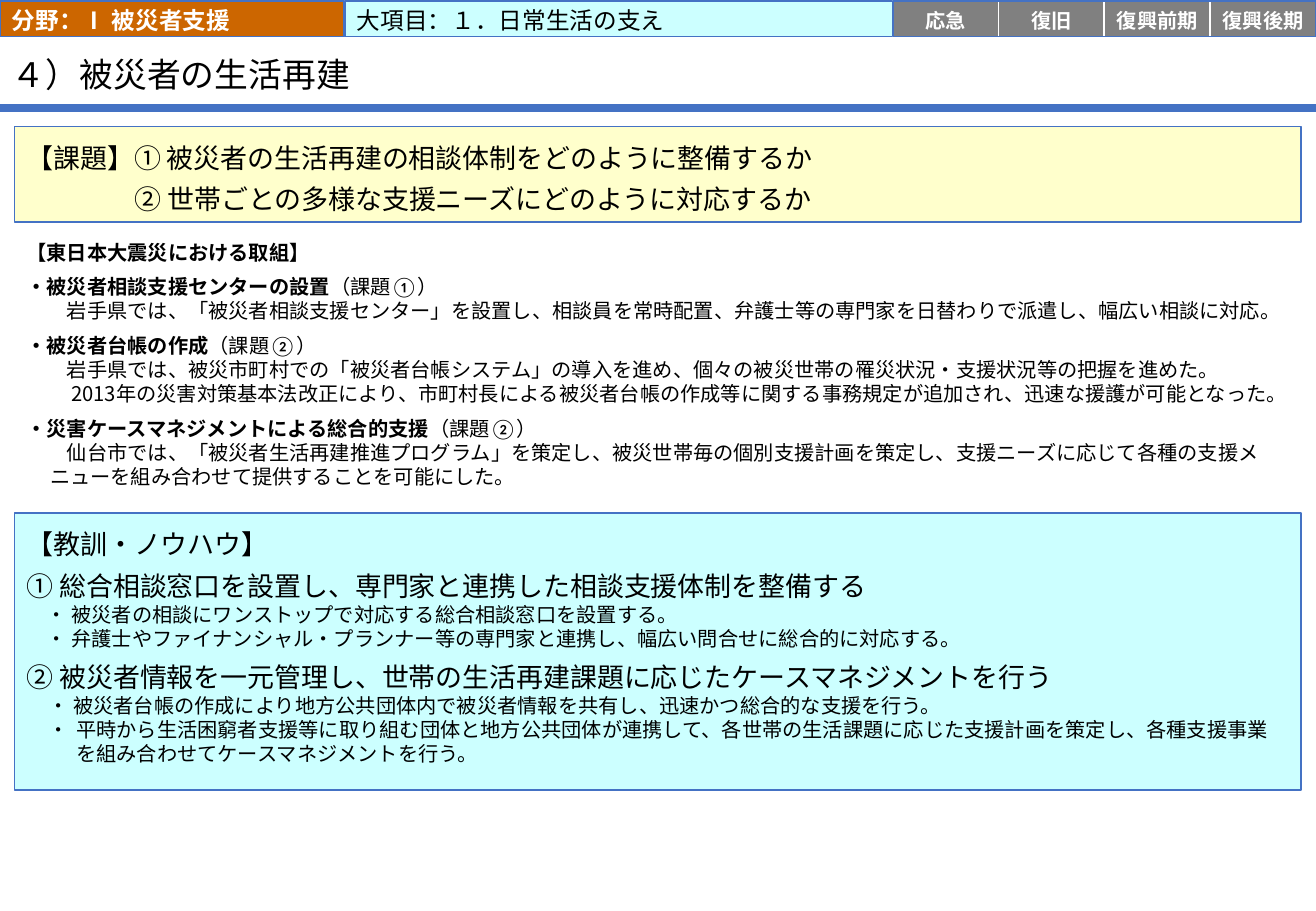
"""Build the slide on rebuilding the lives of disaster victims."""
from dataclasses import dataclass

from lxml import etree
from pptx import Presentation
from pptx.dml.color import RGBColor
from pptx.enum.shapes import MSO_CONNECTOR, MSO_SHAPE
from pptx.enum.text import MSO_ANCHOR, PP_ALIGN
from pptx.oxml.ns import qn
from pptx.slide import Slide
from pptx.util import Pt

RECTANGLE = MSO_SHAPE.RECTANGLE
STRAIGHT = MSO_CONNECTOR.STRAIGHT
TOP, MIDDLE = MSO_ANCHOR.TOP, MSO_ANCHOR.MIDDLE
LEFT, CENTER = PP_ALIGN.LEFT, PP_ALIGN.CENTER

BLACK = RGBColor(0x00, 0x00, 0x00)
WHITE = RGBColor(0xFF, 0xFF, 0xFF)
BLUE = RGBColor(0x44, 0x72, 0xC4)
ORANGE = RGBColor(0xCC, 0x66, 0x00)
CYAN = RGBColor(0xCC, 0xFF, 0xFF)
YELLOW = RGBColor(0xFF, 0xFF, 0xCC)
GRAY = RGBColor(0x80, 0x80, 0x80)

CALIBRI, NOTO = "Calibri", "Noto Sans CJK JP"
PAGE_WIDTH, PAGE_HEIGHT = 780, 540
BAR_TOP, BAR_HEIGHT = 0.7, 20.9
BODY_LEFT, BODY_WIDTH = 8.6, 762.5
PHASE_LEFT, PHASE_WIDTH = 529.2, 62.7
PHASES = ("応急", "復旧", "復興前期", "復興後期")


@dataclass(frozen=True)
class Span:
    text: str
    size: float = 12
    font: str = NOTO
    bold: bool = False
    color: RGBColor = BLACK


@dataclass(frozen=True)
class Para:
    spans: tuple[Span, ...]
    margin: float = 0
    indent: float = 0
    before: float = 0
    spacing: float | Pt | None = None
    align: PP_ALIGN = LEFT


@dataclass(frozen=True)
class Box:
    left: float
    top: float
    width: float
    height: float
    paras: tuple[Para, ...] = ()
    fill: RGBColor | None = None
    line: RGBColor | None = None
    insets: tuple[float, float, float, float] = (7.2, 3.6, 7.2, 3.6)
    anchor: MSO_ANCHOR = MIDDLE


def plain(text: str, size: float = 12, **layout: float | Pt) -> Para:
    """Return a paragraph of one regular span."""
    return Para((Span(text, size),), **layout)


def heading(title: str, issue: str = "", before: float = 6) -> Para:
    """Return a bold heading followed by the issue it answers."""
    spans = [Span(title, font=CALIBRI, bold=True)]
    if issue:
        spans.append(Span(issue, font=CALIBRI))
    return Para(tuple(spans), before=before)


def bar(left: float, width: float, text: str, fill: RGBColor, color: RGBColor, bold: bool) -> Box:
    """Return a labelled cell of the top bar."""
    label = Para((Span(text, 14, CALIBRI, bold, color),))
    return Box(left, BAR_TOP, width, BAR_HEIGHT, (label,), fill, BLUE, (7.2, 1.4, 7.2, 0))


def phase(index: int, text: str) -> Box:
    """Return one recovery phase cell of the top bar."""
    label = Para((Span(text, 12, CALIBRI, True, WHITE),), align=CENTER)
    return Box(PHASE_LEFT + index * PHASE_WIDTH, BAR_TOP, PHASE_WIDTH, BAR_HEIGHT,
               (label,), GRAY, WHITE, (0, 1.4, 0, 0))


def write_paragraph(paragraph, para: Para) -> None:
    """Write the spans and the layout of one paragraph."""
    formats = {"alignment": para.align, "space_before": Pt(para.before),
               "space_after": Pt(0), "line_spacing": para.spacing}
    for name, value in formats.items():
        setattr(paragraph, name, value)
    properties = paragraph._p.get_or_add_pPr()
    properties.set("marL", str(Pt(para.margin)))
    properties.set("indent", str(Pt(para.indent)))
    for span in para.spans:
        run = paragraph.add_run()
        run.text = span.text
        formats = {"name": span.font, "size": Pt(span.size), "bold": span.bold}
        for name, value in formats.items():
            setattr(run.font, name, value)
        run.font.color.rgb = span.color
        east_asian = etree.SubElement(run.font._element, qn("a:ea"))
        east_asian.set("typeface", span.font)


def draw_box(page: Slide, box: Box) -> None:
    """Draw a rectangle with its text."""
    shape = page.shapes.add_shape(
        RECTANGLE, Pt(box.left), Pt(box.top), Pt(box.width), Pt(box.height))
    shape.shadow.inherit = False
    if box.fill is None:
        shape.fill.background()
    else:
        shape.fill.solid()
        shape.fill.fore_color.rgb = box.fill
    if box.line is None:
        shape.line.fill.background()
    else:
        shape.line.color.rgb = box.line
        shape.line.width = Pt(1)
    frame = shape.text_frame
    left, top, right, bottom = box.insets
    formats = {"word_wrap": True, "vertical_anchor": box.anchor,
               "margin_left": Pt(left), "margin_top": Pt(top),
               "margin_right": Pt(right), "margin_bottom": Pt(bottom)}
    for name, value in formats.items():
        setattr(frame, name, value)
    for index, para in enumerate(box.paras):
        write_paragraph(frame.add_paragraph() if index else frame.paragraphs[0], para)


def draw_rule(page: Slide, top: float) -> None:
    """Draw the thick rule under the title."""
    rule = page.shapes.add_connector(STRAIGHT, Pt(0), Pt(top), Pt(PAGE_WIDTH), Pt(top))
    rule.line.color.rgb = BLUE
    rule.line.width = Pt(4.5)
    etree.SubElement(rule._element.spPr, qn("a:effectLst"))


EFFORTS = (
    heading("【東日本大震災における取組】", before=0),
    heading("・被災者相談支援センターの設置", "（課題①）"),
    plain("岩手県では、「被災者相談支援センター」を設置し、相談員を常時配置、弁護士等の専門家を日替わりで派遣し、幅広い相談に対応。", margin=14, indent=10),
    heading("・被災者台帳の作成", "（課題②）"),
    plain("岩手県では、被災市町村での「被災者台帳システム」の導入を進め、個々の被災世帯の罹災状況・支援状況等の把握を進めた。", margin=14, indent=10),
    plain("2013年の災害対策基本法改正により、市町村長による被災者台帳の作成等に関する事務規定が追加され、迅速な援護が可能となった。", margin=14, indent=12.5),
    heading("・災害ケースマネジメントによる総合的支援", "（課題②）"),
    plain("仙台市では、「被災者生活再建推進プログラム」を策定し、被災世帯毎の個別支援計画を策定し、支援ニーズに応じて各種の支援メニューを組み合わせて提供することを可能にした。", margin=14, indent=10),
)
ISSUES = (
    plain("【課題】① 被災者の生活再建の相談体制をどのように整備するか", 16, spacing=Pt(24)),
    plain("② 世帯ごとの多様な支援ニーズにどのように対応するか", 16, margin=64, spacing=Pt(24)),
)
LESSONS = (
    plain("【教訓・ノウハウ】", 16),
    plain("① 総合相談窓口を設置し、専門家と連携した相談支援体制を整備する", 16, before=6),
    plain("・ 被災者の相談にワンストップで対応する総合相談窓口を設置する。", margin=12),
    plain("・ 弁護士やファイナンシャル・プランナー等の専門家と連携し、幅広い問合せに総合的に対応する。", margin=12),
    plain("② 被災者情報を一元管理し、世帯の生活再建課題に応じたケースマネジメントを行う", 16, before=6),
    plain("・ 被災者台帳の作成により地方公共団体内で被災者情報を共有し、迅速かつ総合的な支援を行う。", margin=13),
    plain("・\t平時から生活困窮者支援等に取り組む団体と地方公共団体が連携して、各世帯の生活課題に応じた支援計画を策定し、各種支援事業を組み合わせてケースマネジメントを行う。", margin=29.5, indent=-16.5),
)
BOXES = (
    Box(BODY_LEFT, 136.8, BODY_WIDTH, 158.4, EFFORTS, WHITE),
    Box(0, 23, 682.6, 41.8, (plain("４）被災者の生活再建", 20, spacing=0.9),), insets=(7.2, 2.9, 7.2, 0)),
    bar(0, 203.8, "分野：Ⅰ 被災者支援", ORANGE, WHITE, True),
    bar(204.5, 326.2, "大項目：１．日常生活の支え", CYAN, BLACK, False),
    Box(BODY_LEFT, 74.9, BODY_WIDTH, 56.9, ISSUES, YELLOW, BLUE, (7.2, 8.6, 7.2, 8.6)),
    Box(BODY_LEFT, 303.9, BODY_WIDTH, 164.2, LESSONS, CYAN, BLUE, (7.2, 8.6, 7.2, 0), TOP),
    *(phase(index, text) for index, text in enumerate(PHASES)),
    Box(PHASE_LEFT, BAR_TOP, PHASE_WIDTH * len(PHASES), BAR_HEIGHT, line=BLUE),
)


def main() -> None:
    """Build and save the deck."""
    deck = Presentation()
    deck.slide_width, deck.slide_height = Pt(PAGE_WIDTH), Pt(PAGE_HEIGHT)
    page = deck.slides.add_slide(deck.slide_layouts[6])
    draw_rule(page, 64.1)
    for box in BOXES:
        draw_box(page, box)
    deck.save("out.pptx")


if __name__ == "__main__":
    main()
